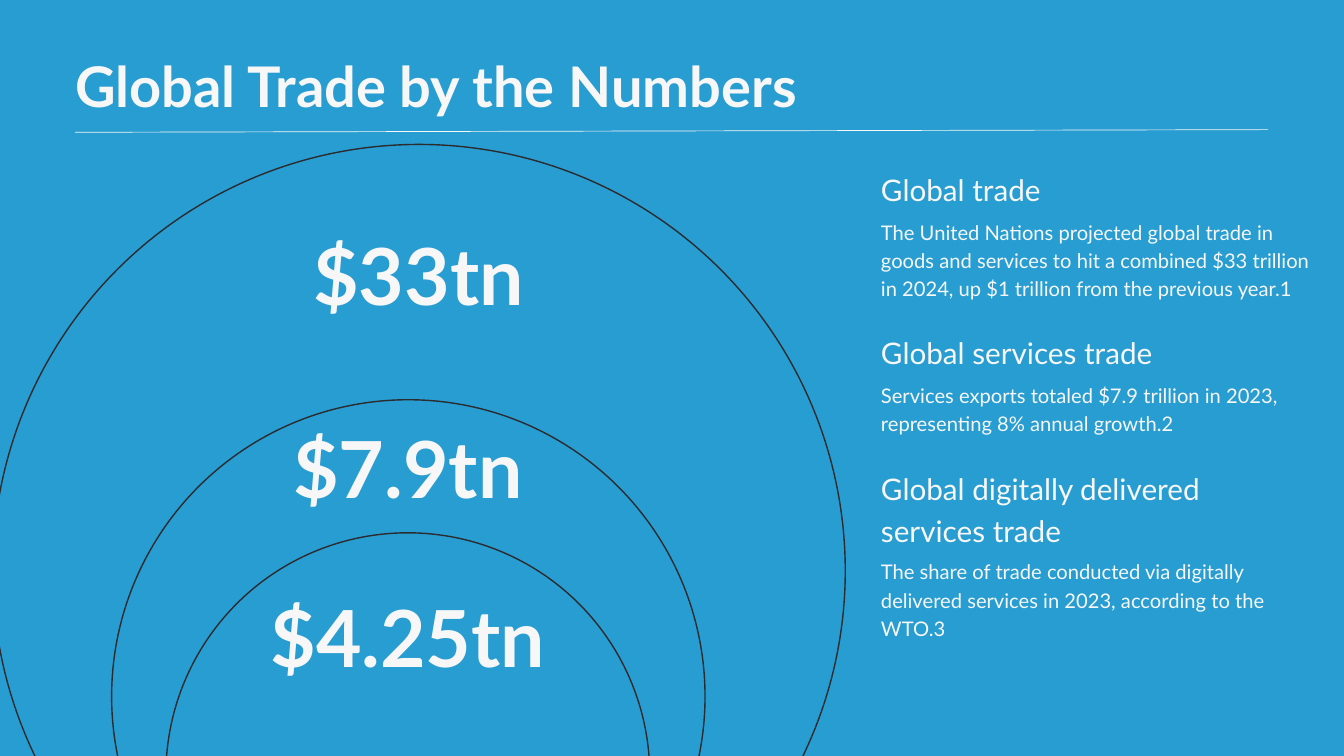
"""Build the 'Global Trade by the Numbers' slide."""
from lxml import etree
from pptx import Presentation, util as u
from pptx.dml.color import RGBColor
from pptx.enum import shapes, text

INK, OUTLINE, BACK = "F7F7F7", "2B2C30", "289DD2"
LEFT, CENTER = text.PP_ALIGN.LEFT, text.PP_ALIGN.CENTER


def rgb(value):
    return RGBColor.from_string(value)


def add_text(sl, words, box, size, leading, bold=False, align=LEFT):
    tf = sl.shapes.add_textbox(*map(u.Cm, box)).text_frame
    frame = {"margin_left": 0, "margin_top": 0, "margin_right": 0, "margin_bottom": 0,
             "word_wrap": True, "auto_size": text.MSO_AUTO_SIZE.SHAPE_TO_FIT_TEXT}
    for name, value in frame.items():
        setattr(tf, name, value)
    p = tf.paragraphs[0]
    p.alignment, p.line_spacing = align, u.Pt(leading)
    r = p.add_run()
    r.text = words
    for name, value in {"name": "Lato", "size": u.Pt(size), "bold": bold}.items():
        setattr(r.font, name, value)
    r.font.color.rgb = rgb(INK)


prs = Presentation()
prs.slide_width, prs.slide_height = u.Cm(50.8), u.Cm(28.575)
sl = prs.slides.add_slide(prs.slide_layouts[6])
sl.background.fill.solid()
sl.background.fill.fore_color.rgb = rgb(BACK)

rule = sl.shapes.add_connector(shapes.MSO_CONNECTOR.STRAIGHT,
                               *map(u.Cm, (2.84, 5, 47.93, 4.9)))
rule.line.color.rgb, rule.line.width = rgb(INK), u.Pt(0.75)
etree.SubElement(rule._element.spPr,
                 "{http://schemas.openxmlformats.org/drawingml/2006/main}effectLst")

add_text(sl, "Global Trade by the Numbers", (2.84, 1.52, 45.09, 2.92), 60, 84, True)

for x, y, size in [(-0.28, 5.46, 32.23), (4.22, 15.11, 22.43), (6.27, 20.14, 18.29)]:
    sp = sl.shapes.add_shape(shapes.MSO_SHAPE.OVAL, *map(u.Cm, (x, y, size, size)))
    sp.shadow.inherit = False
    sp.fill.background()
    sp.line.color.rgb, sp.line.width = rgb(OUTLINE), u.Pt(1.5)

for words, x, y, width in [("$33tn", 8.71, 7.39, 14.22),
                           ("$7.9tn", 8.31, 14.68, 14.22),
                           ("$4.25tn", 7.29, 21.06, 16.26)]:
    add_text(sl, words, (x, y, width, 4.45), 84.3, 134.9, True, CENTER)

notes = [
    ("Global trade", 6.27, 1.47,
     "The United Nations projected global trade in goods and services to hit a combined "
     "$33 trillion in 2024, up $1 trillion from the previous year.1", 8.18, 3.1),
    ("Global services trade", 12.45, 1.47,
     "Services exports totaled $7.9 trillion in 2023, representing 8% annual growth.2",
     14.33, 2.06),
    ("Global digitally delivered services trade", 17.58, 3.05,
     "The share of trade conducted via digitally delivered services in 2023, "
     "according to the WTO.3", 21.01, 3.1),
]
for head, head_y, head_h, body, body_y, body_h in notes:
    add_text(sl, head, (33.3, head_y, 16.21, head_h), 31.8, 44.5)
    add_text(sl, body, (33.3, body_y, 16.21, body_h), 21.6, 30.2)

prs.save("out.pptx")
